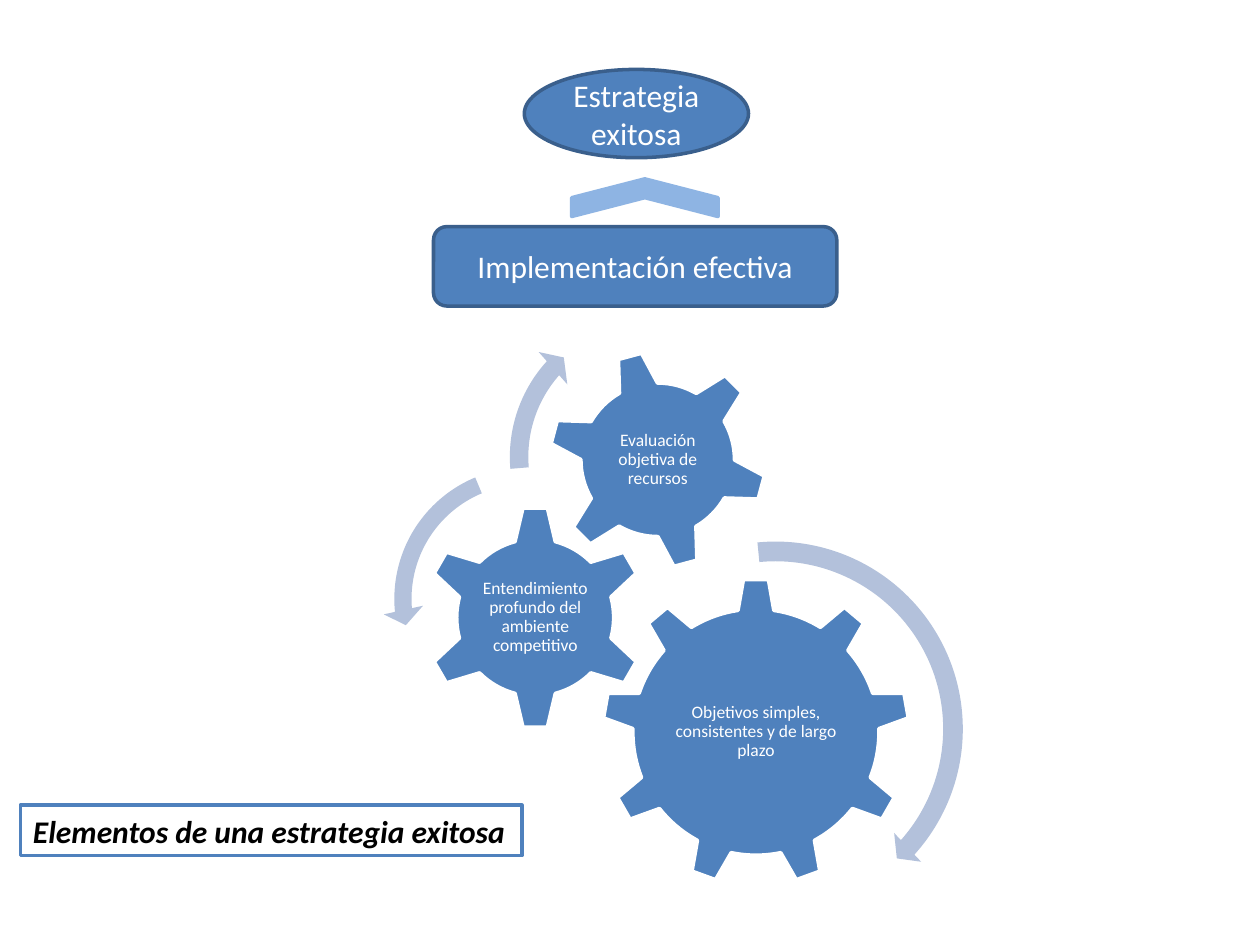
from pptx import Presentation
from pptx.dml.color import RGBColor
from pptx.enum.shapes import MSO_SHAPE as SHAPE
from pptx.enum.text import MSO_ANCHOR as ANCHOR, MSO_AUTO_SIZE as FIT, PP_ALIGN as ALIGN
from pptx.util import Cm, Pt

FONT = "Calibri"
BLUE, NAVY, SKY, PALE = "4F81BD", "3A5F8C", "8EB4E3", "B3C1DB"
WHITE, BLACK = "FFFFFF", "000000"

TITLE = ("Elementos de una estrategia exitosa", (0.41, 16.23, 10.11, 1.02))
GEARS = [
    (SHAPE.GEAR_9, (12.14, 11.66, 6.2), 0, (3.71, 3.2),
     "Objetivos simples, consistentes y de largo plazo"),
    (SHAPE.GEAR_6, (8.53, 10.19, 4.52), 0, (2.25, 2.25),
     "Entendimiento profundo del ambiente competitivo"),
    (SHAPE.GEAR_6, (11.05, 7.06, 4.42), 345, (2.49, 2.49),
     "Evaluación objetiva de recursos"),
]
ARROWS = [
    (SHAPE.CIRCULAR_ARROW, (11.66, 10.72, 7.95), (0.05, 2.99, 25.13, 158.68, 0.05)),
    (SHAPE.LEFT_CIRCULAR_ARROW, (7.72, 9.19, 5.77), (0.06, 4.3, 104.89, 148.38, 0.07)),
    (SHAPE.CIRCULAR_ARROW, (10.03, 6.1, 6.22), (0.06, 3.94, 133.14, 105.08, 0.07)),
]
RESULTS = [
    (SHAPE.ROUNDED_RECTANGLE, (8.74, 4.57, 8.13, 1.6), "Implementación efectiva"),
    (SHAPE.OVAL, (10.57, 1.4, 4.52, 1.78), "Estrategia exitosa"),
]
CHEVRON = (12.62, 2.51, 0.76, 2.95)


def rgb(color):
    return RGBColor.from_string(color)


def paint(sp, fill, line=None):
    sp.fill.solid()
    sp.fill.fore_color.rgb = rgb(fill)
    if line:
        sp.line.color.rgb = rgb(line)
        sp.line.width = Pt(2)
    else:
        sp.line.fill.background()


def add_shape(s, kind, box, fill, line=None, rotation=0):
    sp = s.shapes.add_shape(kind, *map(Cm, box))
    sp.shadow.inherit = False
    sp.rotation = rotation
    paint(sp, fill, line)
    return sp


def write(sp, text, size, color=WHITE, align=ALIGN.CENTER):
    tf = sp.text_frame
    tf.word_wrap = True
    tf.auto_size = FIT.NONE
    tf.vertical_anchor = ANCHOR.MIDDLE
    p = tf.paragraphs[0]
    p.text = text
    p.alignment = align
    p.font.name = FONT
    p.font.size = Pt(size)
    p.font.color.rgb = rgb(color)
    return tf


def add_gear(s, kind, place, rotation, label, text):
    x, y, side = place
    w, h = label
    add_shape(s, kind, (x, y, side, side), BLUE, WHITE, rotation)
    box = (x + (side - w) / 2, y + (side - h) / 2, w, h)
    tf = write(s.shapes.add_textbox(*map(Cm, box)), text, 10)
    tf.margin_left = tf.margin_right = tf.margin_top = tf.margin_bottom = Cm(0.03)
    tf.paragraphs[0].line_spacing = 0.9


def add_title(s, text, box):
    sp = s.shapes.title
    sp.left, sp.top, sp.width, sp.height = map(Cm, box)
    paint(sp, WHITE, BLUE)
    font = write(sp, text, 18, BLACK, ALIGN.LEFT).paragraphs[0].font
    font.bold = font.italic = True


def main():
    prs = Presentation()
    prs.slide_width, prs.slide_height = Cm(25.4), Cm(19.05)
    s = prs.slides.add_slide(prs.slide_layouts[5])
    add_title(s, *TITLE)
    for gear in GEARS:
        add_gear(s, *gear)
    for kind, (x, y, side), adjustments in ARROWS:
        sp = add_shape(s, kind, (x, y, side, side), PALE)
        for i, value in enumerate(adjustments):
            sp.adjustments[i] = value
    for kind, box, text in RESULTS:
        write(add_shape(s, kind, box, BLUE, NAVY), text, 18)
    add_shape(s, SHAPE.CHEVRON, CHEVRON, SKY, SKY, 270)
    prs.save("out.pptx")


if __name__ == "__main__":
    main()
